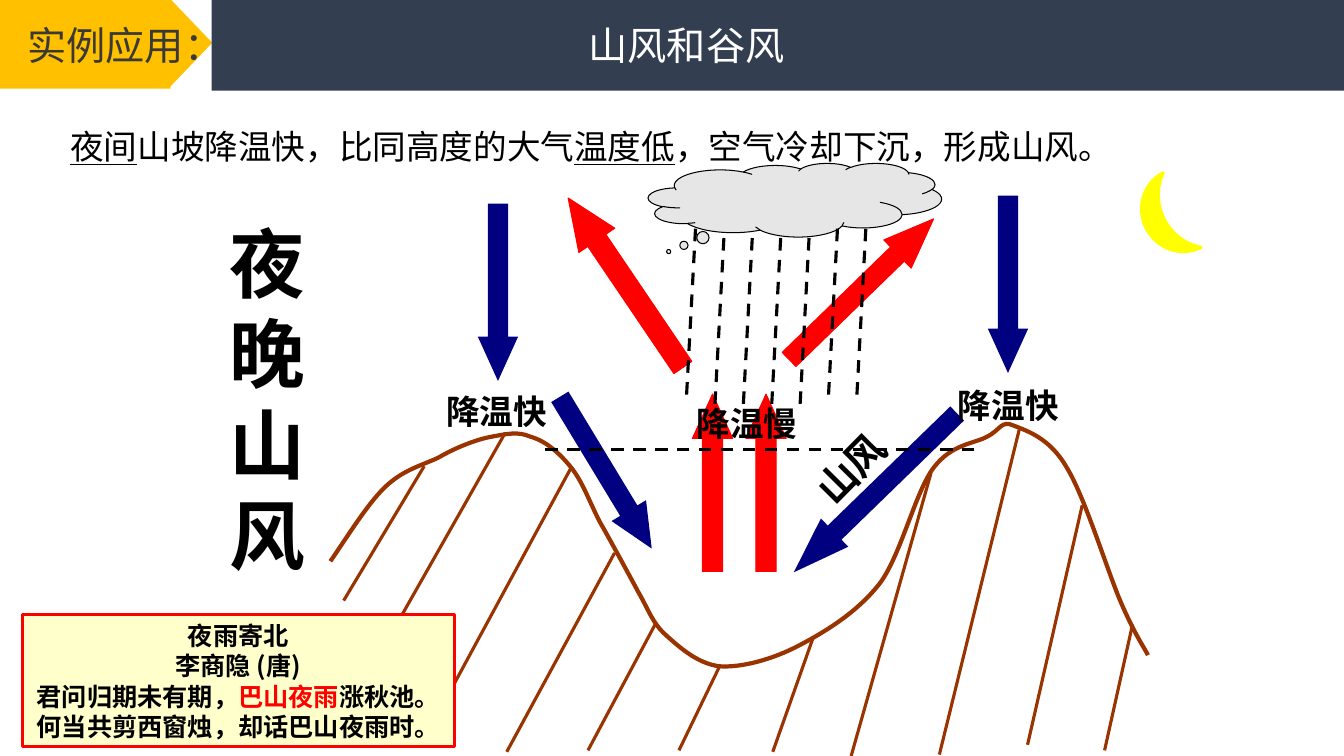
from dataclasses import dataclass

from lxml import etree
from pptx import Presentation
from pptx.dml.color import RGBColor
from pptx.enum.dml import MSO_LINE
from pptx.enum.shapes import MSO_CONNECTOR, MSO_SHAPE
from pptx.enum.text import MSO_ANCHOR, MSO_AUTO_SIZE, PP_ALIGN
from pptx.oxml.ns import qn
from pptx.util import Pt

LEFT, CENTER = PP_ALIGN.LEFT, PP_ALIGN.CENTER
TOP, MIDDLE = MSO_ANCHOR.TOP, MSO_ANCHOR.MIDDLE
GROW = MSO_AUTO_SIZE.SHAPE_TO_FIT_TEXT
DASH = MSO_LINE.DASH
STRAIGHT = MSO_CONNECTOR.STRAIGHT
RECT, TRIANGLE = MSO_SHAPE.RECTANGLE, MSO_SHAPE.ISOSCELES_TRIANGLE
ARROW, MOON, CLOUD = MSO_SHAPE.UP_ARROW, MSO_SHAPE.MOON, MSO_SHAPE.CLOUD_CALLOUT


@dataclass(frozen=True)
class Theme:
    label_font: str = "Arial"
    body_font: str = "Noto Sans CJK SC"
    black: str = "000000"
    white: str = "FFFFFF"
    grey: str = "3B3838"
    slate: str = "333F50"
    amber: str = "FFC000"
    brown: str = "993300"
    navy: str = "000080"
    red: str = "FF0000"
    yellow: str = "FFFF00"
    cream: str = "FFFFCC"
    cloud: str = "E7E6E6"
    poem: int = 18
    body: int = 24
    heading: int = 28
    banner: int = 54


T = Theme()

# Start point, then three points for each Bezier segment.
RIDGE = [
    (236, 401),
    (249, 382), (262, 361), (274, 349), (287, 336), (300, 333), (313, 327),
    (325, 320), (340, 314), (351, 312), (362, 310), (370, 308), (379, 312),
    (390, 315), (400, 324), (408, 334), (416, 344), (420, 356), (428, 372),
    (436, 386), (449, 410), (456, 423), (464, 437), (466, 445), (476, 454),
    (485, 462), (498, 474), (514, 476), (530, 477), (552, 471), (571, 461),
    (590, 451), (613, 437), (629, 416), (644, 395), (654, 351), (667, 334),
    (680, 317), (696, 317), (705, 312), (715, 307), (715, 300), (724, 304),
    (734, 308), (750, 313), (762, 334), (775, 355), (791, 408), (801, 431),
    (811, 454), (817, 462), (820, 468),
]
HATCHING = [
    (303, 333, 245.5, 429), (361, 309, 255.5, 495), (408, 334, 303, 528),
    (439, 395, 362, 537), (468, 446, 420, 536), (514, 476, 485, 536),
    (581, 455, 552, 537), (665, 338, 608, 540), (728, 307, 671, 539),
    (773, 361, 734, 532), (809, 446, 789, 536),
]
# Left, top, width, height, rotation
COLD_AIR = [
    (341.3, 145.4, 28.8, 126.7, 180), (705.6, 139.7, 28.8, 126.7, 180),
    (418.3, 274.3, 28.8, 126.7, 148.8), (611.3, 270.7, 28.1, 162.7, 225.8),
]
WARM_AIR = [
    (532.8, 281.5, 28.8, 126.7, 0), (494.6, 281.5, 28.8, 126.7, 0),
    (431.3, 128.9, 31, 146.2, 325.9), (601.2, 134.6, 28.1, 144, 45.8),
]
LABELS = [
    ("降温快", (288, 275.8, 133.2, 36)),
    ("降温快", (660.2, 271.4, 120.2, 36)),
    ("降温慢", (468.7, 284.4, 129.6, 36)),
]


class Board:
    """Draws on one slide; target is the slide's or the open group's shapes."""

    def __init__(self, slide, theme):
        self.slide, self.theme = slide, theme
        self.target = slide.shapes

    def start_group(self):
        self.target = self.slide.shapes.add_group_shape().shapes

    def end_group(self):
        self.target = self.slide.shapes

    def stroke(self, line, color, width, dash=None):
        line.color.rgb = RGBColor.from_string(color)
        line.width = Pt(width)
        if dash:
            line.dash_style = dash

    def shape(self, kind, box, fill, line=None, width=0.75, rotation=0, adj=()):
        sp = self.target.add_shape(kind, *map(Pt, box))
        sp.shadow.inherit = False
        sp.rotation = rotation
        sp.fill.solid()
        sp.fill.fore_color.rgb = RGBColor.from_string(fill)
        if line:
            self.stroke(sp.line, line, width)
        else:
            sp.line.fill.background()
        for i, value in enumerate(adj):
            sp.adjustments[i] = value
        return sp

    def arrow(self, box, rotation, fill, line=None):
        """Block arrow whose head takes a quarter of its length."""
        w, h = box[2:]
        self.shape(ARROW, box, fill, line, rotation=rotation, adj=(0.5, h / 4 / w))

    def line(self, x1, y1, x2, y2, color, dash=None):
        c = self.target.add_connector(STRAIGHT, *map(Pt, (x1, y1, x2, y2)))
        self.stroke(c.line, color, 2.25, dash)
        etree.SubElement(c.element.spPr, qn("a:effectLst"))

    def curve(self, points, color, width):
        """Open Bezier outline: a start point, then three points per segment."""
        fb = self.target.build_freeform(*points[0], scale=Pt(1))
        fb.add_line_segments(points[1:], close=False)
        sp = fb.convert_to_shape()
        sp.shadow.inherit = False
        sp.fill.background()
        self.stroke(sp.line, color, width)
        steps = list(sp.element.iter(qn("a:lnTo")))
        outline = steps[0].getparent()
        for i in range(0, len(steps), 3):
            bezier = etree.SubElement(outline, qn("a:cubicBezTo"))
            for step in steps[i:i + 3]:
                bezier.append(step[0])
                outline.remove(step)

    def fill_text(self, sp, paragraphs, size, font, color, bold=False, align=LEFT,
                  anchor=TOP):
        """Each paragraph is a list of (text, run colour, underline)."""
        tf = sp.text_frame
        tf.word_wrap = True
        tf.auto_size = GROW
        tf.vertical_anchor = anchor
        for i, runs in enumerate(paragraphs):
            p = tf.add_paragraph() if i else tf.paragraphs[0]
            p.alignment = align
            p.font.size, p.font.name, p.font.bold = Pt(size), font, bold
            p.font.color.rgb = RGBColor.from_string(color)
            for text, run_color, underline in runs:
                if text == "\n":
                    p.add_line_break()
                    continue
                r = p.add_run()
                r.text = text
                if run_color:
                    r.font.color.rgb = RGBColor.from_string(run_color)
                if underline:
                    r.font.underline = True

    def text(self, box, runs, size, font, color, bold=False, align=LEFT, rotation=0):
        sp = self.target.add_textbox(*map(Pt, box))
        sp.rotation = rotation
        self.fill_text(sp, [runs], size, font, color, bold, align)

    def label(self, text, box, size, align=CENTER, rotation=0):
        self.text(box, [plain(text)], size, self.theme.label_font,
                  self.theme.black, True, align, rotation)

    def title(self, text, box, size, font, color):
        """Format the title and bring it in front of what is drawn so far."""
        sp = self.slide.shapes.title
        sp.left, sp.top, sp.width, sp.height = map(Pt, box)
        self.fill_text(sp, [[plain(text)]], size, font, color)
        sp.element.getparent().append(sp.element)


def plain(text):
    return text, None, False


def draw_landscape(b):
    b.start_group()
    b.curve(RIDGE, T.brown, 3)
    for ends in HATCHING:
        b.line(*ends, T.brown)
    b.end_group()
    for *box, rotation in COLD_AIR:
        b.arrow(box, rotation, T.navy)
    for *box, rotation in WARM_AIR:
        b.arrow(box, rotation, T.red, T.red)
    for text, box in LABELS:
        b.label(text, box, T.body)
    b.label("山风", (563, 313.9, 89.3, 41), T.heading, rotation=314.7)
    b.shape(MOON, (817.2, 126.7, 28.8, 59.8), T.yellow, T.yellow, 2.25, 333, (0.5,))
    b.label("夜晚山风", (157, 151.2, 102.2, 269.3), T.banner, LEFT)
    b.line(389.5, 321.1, 695.5, 321.1, T.black, DASH)


def draw_rain(b):
    b.start_group()
    b.shape(CLOUD, (463, 116.6, 209.5, 52.6), T.cloud, T.black, adj=(-0.43, 0.7))
    for i in range(7):
        x, y = 496.8 + 20.28 * i, 163.4 if i in (0, 5, 6) else 170
        b.line(x, y, x - 6.6, y + 122.8, T.black, DASH)
    b.end_group()


def draw_header(b):
    b.start_group()
    b.shape(RECT, (-0.7, -1.4, 122.4, 64.8), T.amber)
    b.shape(TRIANGLE, (103.7, 15.1, 64.8, 31), T.amber, rotation=90)
    b.text((0, 11.5, 151.2, 41), [plain("实例应用：")], T.heading, T.body_font,
           T.grey, align=CENTER)
    b.end_group()
    b.shape(RECT, (151.2, 0, 808.8, 64.8), T.slate)
    b.title("山风和谷风", (413.3, 11.5, 339.1, 41), T.heading, T.body_font, T.white)


def draw_texts(b):
    poem = b.shape(RECT, (15.8, 439.2, 308.9, 94.3), T.cream, T.red, 2.25)
    b.fill_text(poem, [
        [plain("夜雨寄北")],
        [plain("李商隐 (唐)")],
        [plain("君问归期未有期，"), ("巴山夜雨", T.red, False), plain("涨秋池。"),
         plain("\n"), plain("何当共剪西窗烛，却话巴山夜雨时。")],
    ], T.poem, T.body_font, T.black, True, CENTER, MIDDLE)
    b.text((43.2, 86.4, 762.5, 36), [
        ("夜间", None, True), plain("山坡降温快，比同高度的大气"),
        ("温度低", None, True), plain("，空气冷却下沉，形成山风。"),
    ], T.body, T.body_font, T.black)


def main():
    prs = Presentation()
    prs.slide_width, prs.slide_height = Pt(960), Pt(540)
    b = Board(prs.slides.add_slide(prs.slide_layouts[5]), T)
    draw_landscape(b)
    draw_rain(b)
    draw_header(b)
    draw_texts(b)
    prs.save("out.pptx")


if __name__ == "__main__":
    main()
